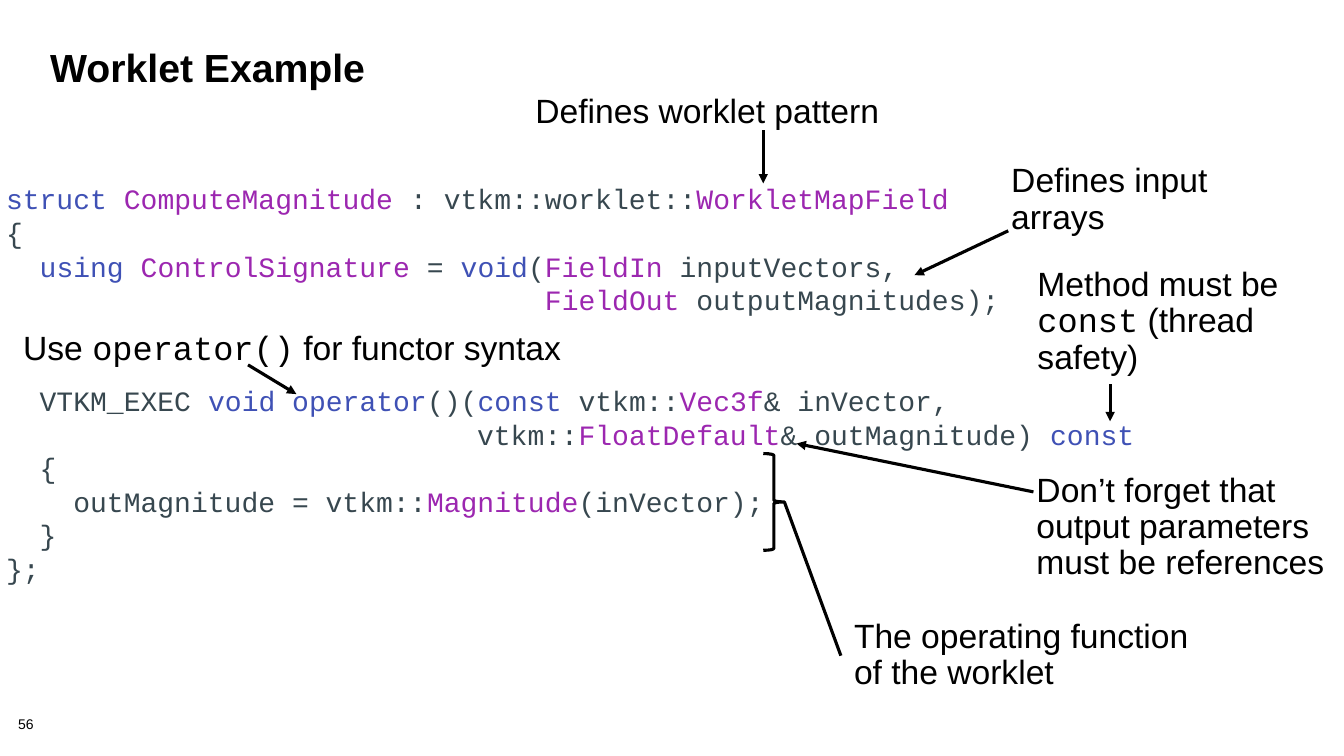
from collections import namedtuple

from lxml.etree import SubElement
from pptx import Presentation
from pptx.dml.color import RGBColor
from pptx.enum.shapes import MSO_CONNECTOR as Connector, MSO_SHAPE as Shape
from pptx.enum.text import MSO_ANCHOR as Anchor
from pptx.oxml.ns import qn
from pptx.util import Inches, Pt

SLIDE_WIDTH, SLIDE_HEIGHT = Inches(13.33), Inches(7.5)
COLUMNS, ROWS = 133.3, 75
COLUMN, ROW = SLIDE_WIDTH / COLUMNS, SLIDE_HEIGHT / ROWS

BLACK = RGBColor(0x00, 0x00, 0x00)
KEYWORD = RGBColor(0x3F, 0x51, 0xB5)
TYPE = RGBColor(0x9C, 0x27, 0xB0)
PLAIN = RGBColor(0x37, 0x47, 0x4F)
SANS, MONO = "Arial", "Courier New"
CODE_PITCH = 24

Box = namedtuple("Box", "left top width height")

DECLARATION = [
    [("struct ", KEYWORD), ("ComputeMagnitude", TYPE),
     (" : vtkm::worklet::", PLAIN), ("WorkletMapField", TYPE)],
    [("{", PLAIN)],
    [("  ", PLAIN), ("using ", KEYWORD), ("ControlSignature", TYPE), (" = ", PLAIN),
     ("void", KEYWORD), ("(", PLAIN), ("FieldIn ", TYPE), ("inputVectors,", PLAIN)],
    [("                                ", PLAIN), ("FieldOut ", TYPE),
     ("outputMagnitudes);", PLAIN)],
]
FUNCTOR = [
    [("  VTKM_EXEC ", PLAIN), ("void operator", KEYWORD), ("()(", PLAIN),
     ("const ", KEYWORD), ("vtkm::", PLAIN), ("Vec3f", TYPE), ("& inVector,", PLAIN)],
    [("                            vtkm::", PLAIN), ("FloatDefault", TYPE),
     ("& outMagnitude) ", PLAIN), ("const", KEYWORD)],
    [("  {", PLAIN)],
    [("    outMagnitude = vtkm::", PLAIN), ("Magnitude", TYPE), ("(inVector);", PLAIN)],
    [("  }", PLAIN)],
    [("};", PLAIN)],
]

NOTES = [
    (Box(101.5, 45.9, 31.8, 12.9),
     [("Don’t forget that output parameters must be references", SANS)],
     (1, 2.9), (-22.5, -1.9)),
    (Box(1, 31.8, 60.3, 5.7),
     [("Use ", SANS), ("operator()", MONO), (" for functor syntax", SANS)],
     (23.6, 4.4), (28.4, 7.3)),
    (Box(101.6, 25.5, 26.8, 12.9),
     [("Method must be ", SANS), ("const", MONO), (" (thread safety)", SANS)],
     (8.5, 12.6), (8.5, 16.3)),
    (Box(99, 15.2, 24.6, 9.3), [("Defines input arrays", SANS)],
     (1, 7.7), (-8.3, 12.1)),
    (Box(51.8, 8.3, 38.9, 5.7), [("Defines worklet pattern", SANS)],
     (23.9, 4.6), (23.9, 9.9)),
]


def place(box):
    """Turn a box in grid cells into slide lengths."""
    return (round(box.left * COLUMN), round(box.top * ROW),
            round(box.width * COLUMN), round(box.height * ROW))


def add_frame(slide, box, side, edge, anchor=Anchor.TOP, wrap=True):
    """Add a text box with the given insets and return it."""
    holder = slide.shapes.add_textbox(*place(box))
    frame = holder.text_frame
    frame.word_wrap = wrap
    frame.vertical_anchor = anchor
    frame.margin_left = frame.margin_right = Inches(side)
    frame.margin_top = frame.margin_bottom = Inches(edge)
    return holder


def add_run(paragraph, words, font, size, color=BLACK, bold=False):
    """Append one styled run to a paragraph."""
    run = paragraph.add_run()
    run.text = words
    run.font.name = font
    run.font.size = Pt(size)
    run.font.bold = bold
    run.font.color.rgb = color


def add_line(slide, start, end, arrow=True):
    """Draw a black line between two grid points."""
    line = slide.shapes.add_connector(
        Connector.STRAIGHT, round(start[0] * COLUMN), round(start[1] * ROW),
        round(end[0] * COLUMN), round(end[1] * ROW))
    line.line.color.rgb = BLACK
    line.line.width = Pt(2.25)
    if arrow:
        SubElement(line.line._get_or_add_ln(), qn("a:tailEnd"), type="triangle")
    SubElement(line._element.spPr, qn("a:effectLst"))
    return line


def add_heading(slide, box, words, size, spacing, inset, bold=False):
    """Write a single line of sans text at the top of a box."""
    side, edge = inset
    line = add_frame(slide, box, side, edge).text_frame.paragraphs[0]
    line.line_spacing = spacing
    add_run(line, words, SANS, size, bold=bold)


def add_code(slide, box):
    """Write the worklet listing with a gap before the functor."""
    frame = add_frame(slide, box, 0.06, 0.06, Anchor.MIDDLE, wrap=False).text_frame
    for number, pieces in enumerate(DECLARATION + FUNCTOR):
        line = frame.add_paragraph() if number else frame.paragraphs[0]
        line.line_spacing = Pt(CODE_PITCH)
        if number == len(DECLARATION):
            line.space_before = Pt(2 * CODE_PITCH)
        for words, color in pieces:
            add_run(line, words, MONO, 20, color)


def add_note(slide, box, pieces):
    """Write a note in its box and return it."""
    note = add_frame(slide, box, 0.13, 0.1, Anchor.MIDDLE)
    line = note.text_frame.paragraphs[0]
    line.line_spacing = 0.9
    for words, font in pieces:
        add_run(line, words, font, 24)
    return note


def add_pointing_note(slide, box, pieces, start, end):
    """Write a note with an arrow given by offsets from its corner."""
    add_note(slide, box, pieces)
    add_line(slide, *((box.left + x, box.top + y) for x, y in (start, end)))


def add_braced_note(slide, box, brace_box, words):
    """Brace the function body and join the brace to its note."""
    brace = slide.shapes.add_shape(Shape.RIGHT_BRACE, *place(brace_box))
    brace.shadow.inherit = False
    brace.fill.background()
    brace.line.color.rgb = BLACK
    brace.line.width = Pt(2.25)
    note = add_note(slide, box, [(words, SANS)])
    tip = (brace_box.left + brace_box.width, brace_box.top + brace_box.height / 2)
    link = add_line(slide, (box.left, box.top + box.height / 2), tip, arrow=False)
    link.begin_connect(note, 1)
    link.end_connect(brace, 1)
    link.end_x, link.end_y = round(tip[0] * COLUMN), round(tip[1] * ROW)


def main():
    """Build the worklet slide and save it."""
    deck = Presentation()
    deck.slide_width, deck.slide_height = SLIDE_WIDTH, SLIDE_HEIGHT
    slide = deck.slides.add_slide(deck.slide_layouts[6])
    add_heading(slide, Box(1.8, 71.2, 5.6, 1.6), "56", 10, 0.9, (0, 0))
    add_heading(slide, Box(4, 4.5, 124.4, 10), "Worklet Example", 28, 0.85,
                (0.1, 0.05), bold=True)
    add_code(slide, Box(0, 17.3, 113.9, 41.5))
    add_braced_note(slide, Box(83.4, 60.4, 38.2, 9.3), Box(75.7, 45, 2.1, 9.6),
                    "The operating function of the worklet")
    for note in NOTES:
        add_pointing_note(slide, *note)
    deck.save("out.pptx")


if __name__ == "__main__":
    main()
